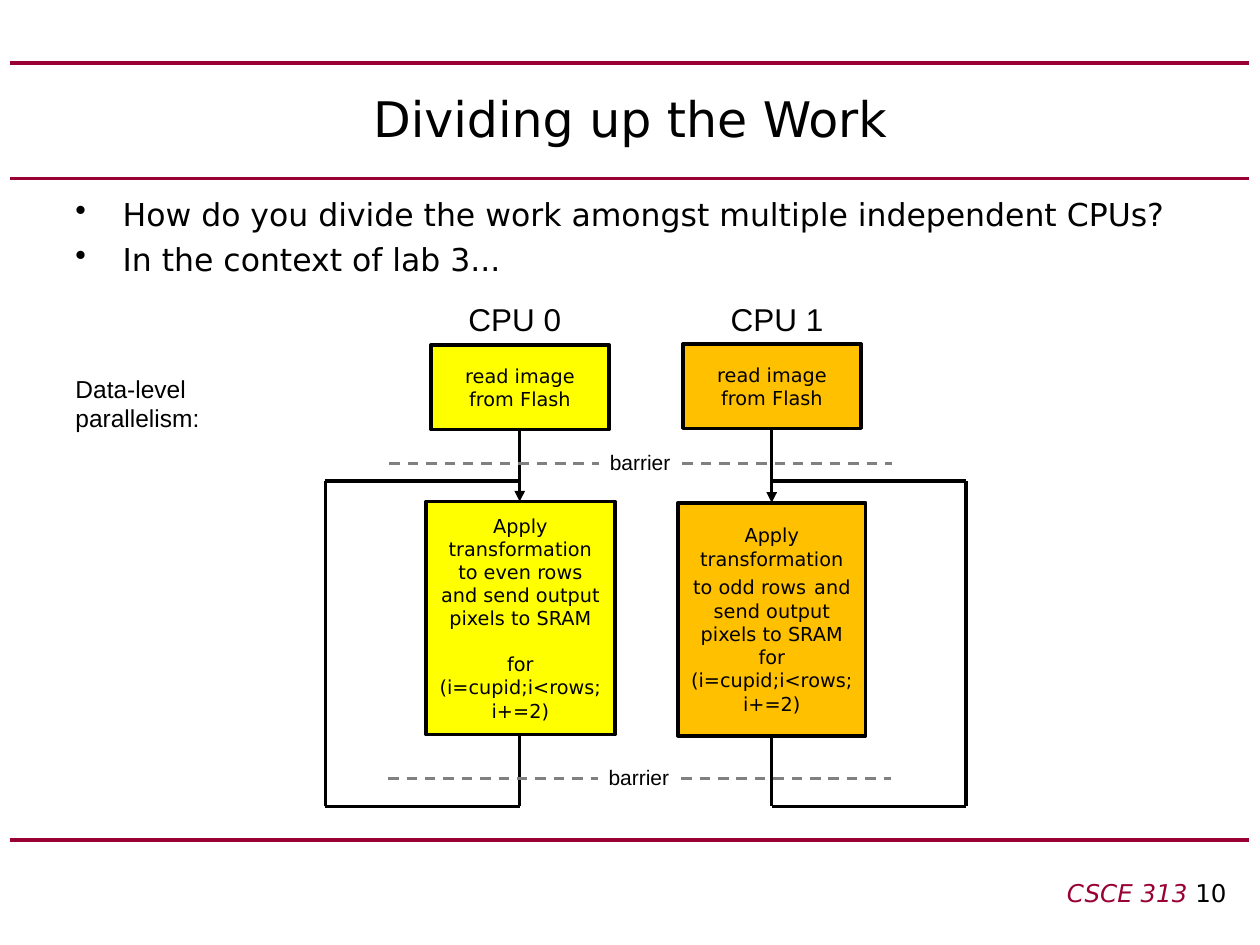
from dataclasses import dataclass
from typing import NamedTuple

import pptx
import pptx.dml.color
import pptx.enum.dml
import pptx.enum.shapes
import pptx.enum.text
import pptx.oxml
import pptx.oxml.ns
import pptx.util

BLACK = pptx.dml.color.RGBColor(0x00, 0x00, 0x00)
GARNET = pptx.dml.color.RGBColor(0x99, 0x00, 0x33)
GRAY = pptx.dml.color.RGBColor(0x80, 0x80, 0x80)
YELLOW = pptx.dml.color.RGBColor(0xFF, 0xFF, 0x00)
ORANGE = pptx.dml.color.RGBColor(0xFF, 0xC0, 0x00)

SANS = "DejaVu Sans"
ARIAL = "Arial"
ALIGN = pptx.enum.text.PP_ALIGN
ANCHOR = pptx.enum.text.MSO_ANCHOR
Pt = pptx.util.Pt

LOOP_TOP, LOOP_BOTTOM = 275, 460.8
BULLET_INDENT = 27


class Box(NamedTuple):
    left: float
    top: float
    width: float
    height: float


class Run(NamedTuple):
    text: str
    size: float
    font: str = SANS
    color: pptx.dml.color.RGBColor = BLACK
    italic: bool = False


@dataclass
class Paragraph:
    runs: list[Run]
    space_before: float = 0
    bullet: bool = False


@dataclass
class Cpu:
    name: str
    color: pptx.dml.color.RGBColor
    center: float
    loop_side: float
    label: Box
    read_box: Box
    apply_box: Box
    apply_text: list[Paragraph]


class Barrier(NamedTuple):
    left: float
    middle: float


LOOP_CODE = "for (i=cupid;i<rows;i+=2)"
CPUS = [
    Cpu("CPU 0", YELLOW, 297, 186, Box(246.2, 167.8, 96, 28.8),
        Box(246.2, 197.3, 102, 48.2), Box(243.4, 286.6, 108, 133.2),
        [Paragraph([Run("Apply transformation to even rows and send output pixels to SRAM", 11)]),
         Paragraph([Run(LOOP_CODE, 11)], space_before=13)]),
    Cpu("CPU 1", ORANGE, 441, 552, Box(396, 167.8, 96, 28.8),
        Box(390.2, 196.6, 102, 48.2), Box(387.4, 287.3, 107.3, 133.2),
        [Paragraph([Run("Apply transformation to odd rows", 11), Run(" ", 14),
                    Run("and send output pixels to SRAM", 11)]),
         Paragraph([Run(LOOP_CODE, 11)])]),
]
BARRIERS = [Barrier(222.5, 265), Barrier(221.8, 445)]


def set_attributes(target, values: dict) -> None:
    for name, value in values.items():
        setattr(target, name, value)


def add_bullet(paragraph) -> None:
    properties = paragraph._p.get_or_add_pPr()
    properties.set("marL", str(Pt(BULLET_INDENT)))
    properties.set("indent", str(-Pt(BULLET_INDENT)))
    bullet = pptx.oxml.parse_xml(
        f'<a:buChar {pptx.oxml.ns.nsdecls("a")} char="•"/>')
    properties.append(bullet)


def write_text(shape, paragraphs: list[Paragraph], alignment, anchor) -> None:
    frame = shape.text_frame
    set_attributes(frame, {"word_wrap": True, "vertical_anchor": anchor})
    for index, content in enumerate(paragraphs):
        paragraph = frame.add_paragraph() if index else frame.paragraphs[0]
        if content.bullet:
            add_bullet(paragraph)
        set_attributes(paragraph, {"alignment": alignment,
                                   "space_before": Pt(content.space_before)})
        for part in content.runs:
            run = paragraph.add_run()
            run.text = part.text
            set_attributes(run.font, {"name": part.font, "size": Pt(part.size),
                                      "italic": part.italic})
            run.font.color.rgb = part.color


def add_text(slide, box: Box, paragraphs: list[Paragraph],
             alignment=ALIGN.LEFT, anchor=ANCHOR.TOP) -> None:
    shape = slide.shapes.add_textbox(*map(Pt, box))
    write_text(shape, paragraphs, alignment, anchor)


def add_step(slide, box: Box, color, paragraphs: list[Paragraph]) -> None:
    shape = slide.shapes.add_shape(
        pptx.enum.shapes.MSO_SHAPE.RECTANGLE, *map(Pt, box))
    shape.shadow.inherit = False
    shape.fill.solid()
    shape.fill.fore_color.rgb = color
    shape.line.color.rgb = BLACK
    shape.line.width = Pt(2)
    write_text(shape, paragraphs, ALIGN.CENTER, ANCHOR.MIDDLE)


def add_line(slide, start: tuple[float, float], end: tuple[float, float],
             color=BLACK, width: float = 2, dashed: bool = False,
             arrow: bool = False) -> None:
    connector = slide.shapes.add_connector(
        pptx.enum.shapes.MSO_CONNECTOR.STRAIGHT, *map(Pt, (*start, *end)))
    connector.line.color.rgb = color
    connector.line.width = Pt(width)
    if dashed:
        connector.line.dash_style = pptx.enum.dml.MSO_LINE.DASH
    namespace = pptx.oxml.ns.nsdecls("a")
    if arrow:
        connector.line._get_or_add_ln().append(
            pptx.oxml.parse_xml(f'<a:tailEnd {namespace} type="triangle"/>'))
    connector._element.spPr.append(
        pptx.oxml.parse_xml(f"<a:effectLst {namespace}/>"))


def add_cpu(slide, cpu: Cpu) -> None:
    """Draw one processor's column: label, two steps, arrow and loop."""
    add_text(slide, cpu.label, [Paragraph([Run(cpu.name, 18, ARIAL)])], ALIGN.CENTER)
    add_step(slide, cpu.read_box, cpu.color,
             [Paragraph([Run("read image from Flash", 11)])])
    add_step(slide, cpu.apply_box, cpu.color, cpu.apply_text)
    read_bottom = cpu.read_box.top + cpu.read_box.height
    apply_bottom = cpu.apply_box.top + cpu.apply_box.height
    add_line(slide, (cpu.center, read_bottom), (cpu.center, cpu.apply_box.top), arrow=True)
    corners = [(cpu.center, apply_bottom), (cpu.center, LOOP_BOTTOM),
               (cpu.loop_side, LOOP_BOTTOM), (cpu.loop_side, LOOP_TOP),
               (cpu.center, LOOP_TOP)]
    for start, end in zip(corners, corners[1:]):
        add_line(slide, start, end)


def add_barrier(slide, barrier: Barrier) -> None:
    for offset in (0, 167.5):
        left = barrier.left + offset
        add_line(slide, (left, barrier.middle), (left + 120, barrier.middle),
                 GRAY, 1.5, dashed=True)
    add_text(slide, Box(barrier.left + 89.3, barrier.middle - 11.6, 108, 21.6),
             [Paragraph([Run("barrier", 12, ARIAL)])], ALIGN.CENTER)


def main() -> None:
    presentation = pptx.Presentation()
    set_attributes(presentation, {"slide_width": Pt(720), "slide_height": Pt(540)})
    slide = presentation.slides.add_slide(presentation.slide_layouts[6])

    for height in (36, 102, 480):
        add_line(slide, (6, height), (714, height), GARNET, 2.25)
    add_text(slide, Box(36, 36, 648, 63), [Paragraph([Run("Dividing up the Work", 28)])],
             ALIGN.CENTER, ANCHOR.MIDDLE)
    add_text(slide, Box(36, 108, 648, 60), [
        Paragraph([Run("How do you divide the work amongst multiple independent CPUs?", 18)],
                  bullet=True),
        Paragraph([Run("In the context of lab 3...", 18)], space_before=4, bullet=True)])
    add_text(slide, Box(270, 498, 438, 24),
             [Paragraph([Run("CSCE 313 ", 14, color=GARNET, italic=True), Run("10", 14)])],
             ALIGN.RIGHT)
    add_text(slide, Box(36, 210, 96, 41),
             [Paragraph([Run("Data-level parallelism:", 14, ARIAL)])])

    for cpu in CPUS:
        add_cpu(slide, cpu)
    for barrier in BARRIERS:
        add_barrier(slide, barrier)
    presentation.save("out.pptx")


if __name__ == "__main__":
    main()
